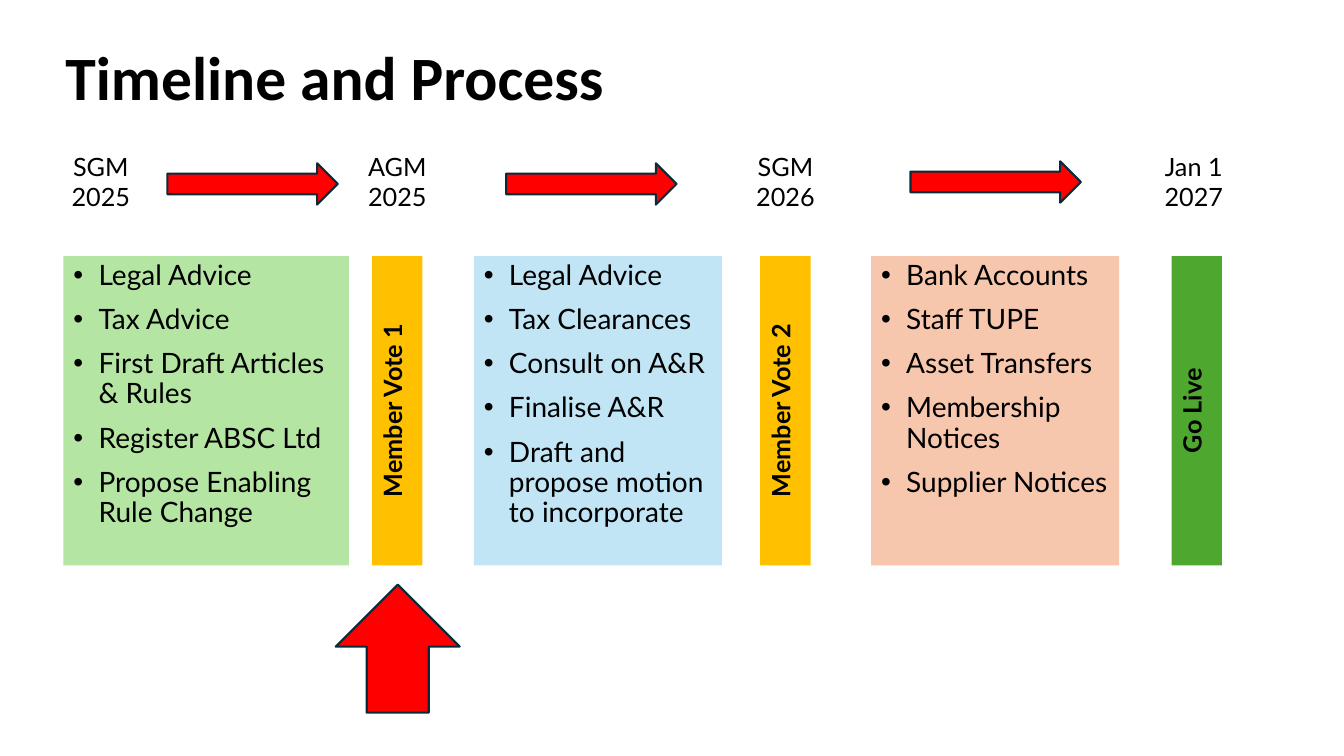
"""Build the timeline and process slide."""
from dataclasses import dataclass

from lxml import etree
from pptx import Presentation, util as u
from pptx.dml.color import RGBColor
from pptx.enum import shapes, text

CELL = u.Inches(0.1)
COLS, ROWS = 133.3, 75
TOP, TALL = 25.4, 30.7
BLACK = RGBColor(0x00, 0x00, 0x00)
GREEN = RGBColor(0xB4, 0xE5, 0xA2)
BLUE = RGBColor(0xC1, 0xE5, 0xF5)
PEACH = RGBColor(0xF6, 0xC6, 0xAD)
GOLD = RGBColor(0xFF, 0xC0, 0x00)
LEAF = RGBColor(0x4E, 0xA7, 0x2E)
RED = RGBColor(0xFF, 0x00, 0x00)
NAVY = RGBColor(0x09, 0x2A, 0x39)


@dataclass(frozen=True)
class Area:
    col: float
    row: float
    wide: float
    tall: float

    def emu(self) -> list[int]:
        return [round(n * CELL) for n in (self.col, self.row, self.wide, self.tall)]


@dataclass(frozen=True)
class Stage:
    col: float
    wide: float
    fill: RGBColor
    tasks: tuple[str, ...]


@dataclass(frozen=True)
class Gate:
    col: float
    fill: RGBColor
    name: str


@dataclass(frozen=True)
class Date:
    col: float
    name: str


@dataclass(frozen=True)
class Arrow:
    area: Area
    turn: int = 0


STAGES = (
    Stage(6.3, 28.3, GREEN, ("Legal Advice", "Tax Advice", "First Draft Articles & Rules",
                             "Register ABSC Ltd", "Propose Enabling Rule Change")),
    Stage(47, 24.6, BLUE, ("Legal Advice", "Tax Clearances", "Consult on A&R",
                           "Finalise A&R", "Draft and propose motion to incorporate")),
    Stage(86.4, 24.6, PEACH, ("Bank Accounts", "Staff TUPE", "Asset Transfers",
                              "Membership Notices", "Supplier Notices")),
)
GATES = (
    Gate(36.9, GOLD, "Member Vote 1"),
    Gate(75.4, GOLD, "Member Vote 2"),
    Gate(116.2, LEAF, "Go Live"),
)
DATES = (
    Date(5.5, "SGM 2025"),
    Date(34.9, "AGM 2025"),
    Date(73.4, "SGM 2026"),
    Date(113.9, "Jan 1 2027"),
)
ARROWS = (
    Arrow(Area(16.6, 16.2, 16.9, 4.1)),
    Arrow(Area(50.2, 16.2, 16.9, 4.1)),
    Arrow(Area(90.3, 16, 16.9, 4.1)),
    Arrow(Area(33.1, 58.2, 12.7, 12.3), 270),
)


def style(para, size: int, face: str = "Lato", bold: bool = False) -> None:
    font = para.font
    font.name, font.size, font.bold = face, u.Pt(size), bold
    font.color.rgb = BLACK


def bullet(para) -> None:
    props = para._p.get_or_add_pPr()
    props.set("marL", str(u.Inches(0.25)))
    props.set("indent", str(-u.Inches(0.25)))
    space = props.nsmap["a"]
    etree.SubElement(props, f"{{{space}}}buFont", typeface="Arial")
    etree.SubElement(props, f"{{{space}}}buChar", char="•")


def add_shape(slide, kind, area: Area, fill: RGBColor):
    shape = slide.shapes.add_shape(kind, *area.emu())
    shape.shadow.inherit = False
    shape.fill.solid()
    shape.fill.fore_color.rgb = fill
    shape.line.fill.background()
    return shape


def add_text(slide, area: Area, words: str):
    frame = slide.shapes.add_textbox(*area.emu()).text_frame
    frame.word_wrap = True
    frame.text = words
    return frame


def add_title(slide, words: str) -> None:
    frame = add_text(slide, Area(5.5, 3.5, 81.2, 8.9), words)
    frame.vertical_anchor = text.MSO_ANCHOR.MIDDLE
    para = frame.paragraphs[0]
    para.line_spacing = 0.9
    style(para, 44, "Calibri", True)


def add_stage(slide, stage: Stage) -> None:
    area = Area(stage.col, TOP, stage.wide, TALL)
    frame = add_shape(slide, shapes.MSO_SHAPE.RECTANGLE, area, stage.fill).text_frame
    frame.word_wrap = True
    frame.vertical_anchor = text.MSO_ANCHOR.TOP
    frame.text = "\n".join(stage.tasks)
    for rank, para in enumerate(frame.paragraphs):
        bullet(para)
        para.alignment = text.PP_ALIGN.LEFT
        para.line_spacing = 0.9
        para.space_before = u.Pt(10 if rank else 0)
        style(para, 20)


def add_gate(slide, gate: Gate) -> None:
    area = Area(gate.col, TOP, 5, TALL)
    frame = add_shape(slide, shapes.MSO_SHAPE.RECTANGLE, area, gate.fill).text_frame
    frame.word_wrap = True
    frame.vertical_anchor = text.MSO_ANCHOR.TOP
    frame._txBody.bodyPr.set("vert", "vert270")
    frame.text = gate.name
    para = frame.paragraphs[0]
    para.alignment = text.PP_ALIGN.CENTER
    style(para, 18, bold=True)


def add_date(slide, date: Date) -> None:
    para = add_text(slide, Area(date.col, 14.5, 9, 7.1), date.name).paragraphs[0]
    para.alignment = text.PP_ALIGN.CENTER
    style(para, 18)


def add_arrow(slide, arrow: Arrow) -> None:
    shape = add_shape(slide, shapes.MSO_SHAPE.RIGHT_ARROW, arrow.area, RED)
    shape.line.color.rgb = NAVY
    shape.line.width = u.Pt(1.5)
    shape.rotation = arrow.turn


def main() -> None:
    deck = Presentation()
    deck.slide_width, deck.slide_height = round(COLS * CELL), round(ROWS * CELL)
    slide = deck.slides.add_slide(deck.slide_layouts[6])
    add_title(slide, "Timeline and Process")
    for items, draw in ((STAGES, add_stage), (DATES, add_date),
                        (GATES, add_gate), (ARROWS, add_arrow)):
        for item in items:
            draw(slide, item)
    deck.save("out.pptx")


if __name__ == "__main__":
    main()
